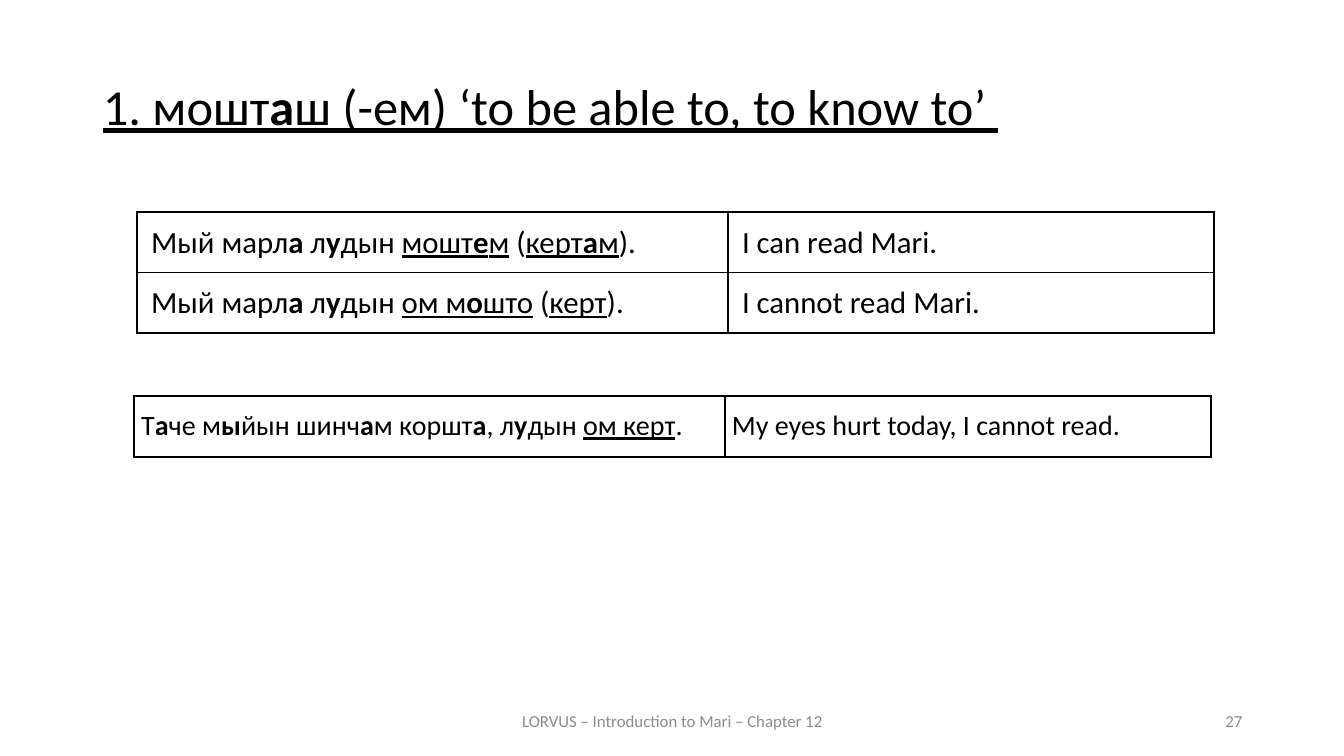
"""Build a slide on the Mari verb for 'to be able to', with two example tables."""
from dataclasses import dataclass
from itertools import product

from lxml import etree
from pptx import Presentation
from pptx.dml.color import RGBColor
from pptx.enum.text import MSO_ANCHOR, MSO_AUTO_SIZE, PP_ALIGN
from pptx.oxml.ns import qn
from pptx.util import Inches, Pt

TOP, MIDDLE = MSO_ANCHOR.TOP, MSO_ANCHOR.MIDDLE
LEFT, CENTER, RIGHT, JUSTIFY = (
    PP_ALIGN.LEFT, PP_ALIGN.CENTER, PP_ALIGN.RIGHT, PP_ALIGN.JUSTIFY)
FIXED = MSO_AUTO_SIZE.NONE


@dataclass(frozen=True)
class Theme:
    """Colours, font, type sizes and line widths."""
    font: str = "Calibri"
    ink: str = "000000"
    gray: str = "8C8C8C"
    title: int = 36
    small: int = 12
    outer: float = 1.5
    inner: float = 1


THEME = Theme()
WIDTH, HEIGHT = 13.33, 7.5
COLS, ROW = (5.86, 4.82), 0.6

# In all wording, * switches bold and _ switches underline.
TITLE = "_1. мошт*а*ш (-ем) ‘to be able to, to know to’ _"
TABLES = [
    {"at": (1.36, 2.1), "size": 22, "align": JUSTIFY, "pad": (0.14, 0.02),
     "rows": [
         ("Мый марл*а* л*у*дын _мошт*е*м_ (_керт*а*м_).", "I can read Mari."),
         ("Мый марл*а* л*у*дын _ом м*о*што_ (_керт_).", "I cannot read Mari."),
     ]},
    {"at": (1.33, 3.93), "size": 20, "align": LEFT, "pad": (0.07, 0),
     "rows": [
         ("Т*а*че м*ы*йын шинч*а*м коршт*а*, л*у*дын _ом керт_.",
          "My eyes hurt today, I cannot read."),
     ]},
]
FOOT = [
    ("LORVUS – Introduction to Mari – Chapter 12", 4.42, 4.5, CENTER),
    ("27", 9.42, 3, RIGHT),
]


def split(text):
    """Yield each stretch of text with its bold and underline state."""
    for i, part in enumerate(text.split("_")):
        for j, bit in enumerate(part.split("*")):
            if bit:
                yield bit, j % 2 == 1, i % 2 == 1


def write(frame, text, size, align, color=THEME.ink):
    """Fill a text frame with marked-up wording."""
    para = frame.paragraphs[0]
    para.alignment = align
    for bit, bold, under in split(text):
        run = para.add_run()
        run.text = bit
        font = run.font
        font.name, font.size = THEME.font, Pt(size)
        font.bold, font.underline = bold, under
        font.color.rgb = RGBColor.from_string(color)
    return para


def edge(cell, sides):
    """Draw the cell borders, given widths for left, right, top, bottom."""
    props = cell._tc.get_or_add_tcPr()
    for i, (side, width) in enumerate(zip("LRTB", sides)):
        line = etree.Element(qn(f"a:ln{side}"), w=str(Pt(width)))
        fill = etree.SubElement(line, qn("a:solidFill"))
        etree.SubElement(fill, qn("a:srgbClr"), val=THEME.ink)
        props.insert(i, line)


def add_grid(slide, data):
    """Add one table of examples with translations."""
    rows = data["rows"]
    high, wide = len(rows), len(COLS)
    left, top = data["at"]
    grid = slide.shapes.add_table(
        high, wide, Inches(left), Inches(top),
        Inches(sum(COLS)), Inches(ROW * high)).table
    grid.first_row = grid.horz_banding = False
    for col, width in zip(grid.columns, COLS):
        col.width = Inches(width)
    for row in grid.rows:
        row.height = Inches(ROW)
    side, over = data["pad"]
    for r, c in product(range(high), range(wide)):
        cell = grid.cell(r, c)
        cell.fill.background()
        cell.vertical_anchor = MIDDLE
        cell.margin_left = cell.margin_right = Inches(side)
        cell.margin_top, cell.margin_bottom = Inches(over), 0
        write(cell.text_frame, rows[r][c], data["size"], data["align"])
        rim = (c == 0, c == wide - 1, r == 0, r == high - 1)
        edge(cell, [THEME.outer if out else THEME.inner for out in rim])


def main():
    """Lay out the title, the tables and the footer, then save."""
    deck = Presentation()
    deck.slide_width, deck.slide_height = Inches(WIDTH), Inches(HEIGHT)
    slide = deck.slides.add_slide(deck.slide_layouts.get_by_name("Title Only"))

    title = slide.shapes.title
    title.left, title.top = Inches(0.92), Inches(0.76)
    title.width, title.height = Inches(11.5), Inches(0.99)
    frame = title.text_frame
    frame.auto_size, frame.vertical_anchor = FIXED, TOP
    para = write(frame, TITLE, THEME.title, JUSTIFY)
    para.line_spacing, para.space_before = 0.9, Pt(12)

    for data in TABLES:
        add_grid(slide, data)

    for text, left, width, align in FOOT:
        box = slide.shapes.add_textbox(
            Inches(left), Inches(6.95), Inches(width), Inches(0.4))
        frame = box.text_frame
        frame.word_wrap, frame.vertical_anchor = True, MIDDLE
        write(frame, text, THEME.small, align, THEME.gray)

    deck.save("out.pptx")


if __name__ == "__main__":
    main()
